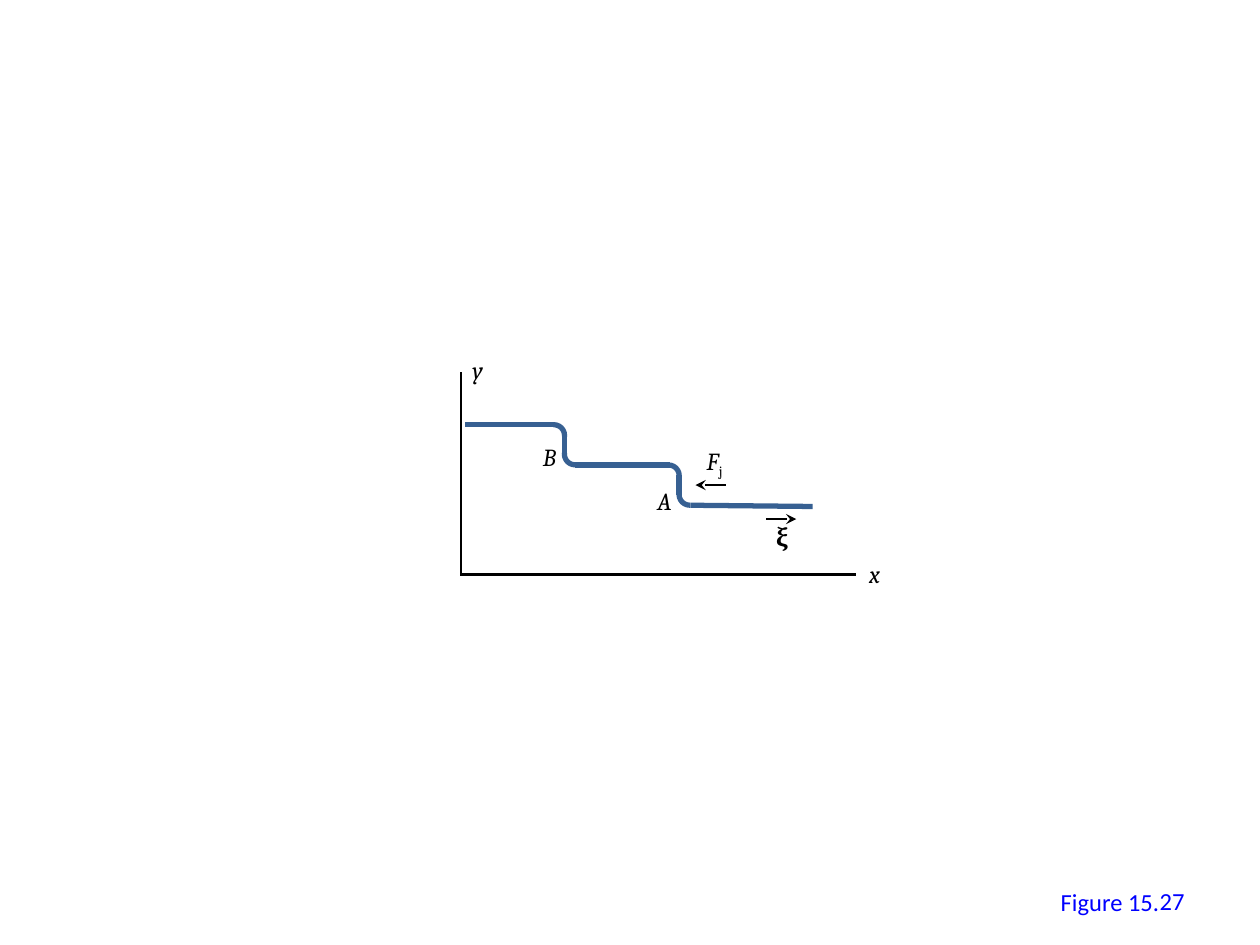
from typing import NamedTuple

from lxml import etree
from pptx import Presentation
from pptx.dml.color import RGBColor
from pptx.enum import shapes as sh, text as tx
from pptx.oxml.ns import qn
from pptx.util import Inches, Pt

HUES = {"ink": "000000", "step": "376092", "note": "0000FF"}
ARC = 0.17  # width and height of a corner's arc


class Label(NamedTuple):
    text: str
    x: float
    y: float
    w: float
    h: float = 0.34
    font: str = "Cambria"
    hue: str = "ink"
    bold: bool = False
    ital: bool = True
    sub: str = ""


class Line(NamedTuple):
    x1: float
    y1: float
    x2: float
    y2: float
    hue: str = "ink"
    width: float = 1.5
    arrow: bool = False


class Corner(NamedTuple):
    """A rounded drop in the step line, with its riser at x."""
    x: float
    top: float


LABELS = [
    Label("y", 3.65, 2.77, 0.34),
    Label("x", 6.8, 4.39, 0.34),
    Label("ξ", 6.06, 4.09, 0.3, bold=True, ital=False),
    Label("F", 5.51, 3.49, 0.41, sub="j"),
    Label("A", 5.12, 3.81, 0.37),
    Label("B", 4.21, 3.46, 0.37),
    Label("Figure 15.", 8.32, 6.99, 0.99, font="Calibri", hue="note", ital=False),
]
AXES = [Line(6.79, 4.56, 3.66, 4.56), Line(3.66, 4.57, 3.66, 2.95)]
ARROWS = [
    Line(6.08, 4.12, 6.32, 4.12, arrow=True),
    Line(5.76, 3.85, 5.52, 3.85, arrow=True),
]
CORNERS = [Corner(4.48, 3.37), Corner(5.39, 3.69)]
TREADS = [
    Line(4.4, 3.37, 3.69, 3.37, "step", 3),
    Line(5.32, 3.69, 4.56, 3.69, "step", 3),
    Line(6.45, 4.02, 5.48, 4.01, "step", 3),
]


def color(hue: str) -> RGBColor:
    return RGBColor.from_string(HUES[hue])


def draw_line(host, line: Line) -> None:
    ends = [Inches(v) for v in line[:4]]
    item = host.add_connector(sh.MSO_CONNECTOR.STRAIGHT, *ends)
    item.line.color.rgb = color(line.hue)
    item.line.width = Pt(line.width)
    if line.arrow:
        etree.SubElement(item.line._get_or_add_ln(), qn("a:tailEnd"), type="stealth")
    etree.SubElement(item._element.spPr, qn("a:effectLst"))


def draw_arc(host, x: float, y: float, turn: int) -> None:
    arc = host.add_shape(sh.MSO_SHAPE.ARC, *map(Inches, (x, y, ARC, ARC)))
    arc.adjustments[0], arc.adjustments[1] = 52.78, 112.1
    arc.rotation = turn
    arc.shadow.inherit = False
    arc.fill.background()
    arc.line.color.rgb = color("step")
    arc.line.width = Pt(3)


def draw_corner(host, corner: Corner) -> None:
    x, top = corner
    draw_arc(host, x, top + 0.15, 0)
    draw_arc(host, x - ARC, top, 180)
    draw_line(host, Line(x, top + 0.24, x, top + 0.08, "step", 3))


def draw_label(host, label: Label, wrap: bool = False):
    box = host.add_textbox(*map(Inches, label[1:5]))
    frame = box.text_frame
    frame.word_wrap = wrap
    para = frame.paragraphs[0]
    para.add_run().text = label.text
    font = para.font
    font.name, font.size = label.font, Pt(14)
    font.bold, font.italic = label.bold, label.ital
    font.color.rgb = color(label.hue)
    if label.sub:
        run = para.add_run()
        run.text = label.sub
        run.font.italic = False
        run._r.get_or_add_rPr().set("baseline", "-25000")
    return frame


def main() -> None:
    deck = Presentation()
    deck.slide_width, deck.slide_height = Inches(10), Inches(7.5)
    host = deck.slides.add_slide(deck.slide_layouts[6]).shapes
    for axis in AXES:
        draw_line(host, axis)
    steps = host.add_group_shape().shapes
    for corner in CORNERS:
        draw_corner(steps, corner)
    for tread in TREADS:
        draw_line(steps, tread)
    for arrow in ARROWS:
        draw_line(host, arrow)
    for label in LABELS:
        draw_label(host, label)
    page = Label("27", 7.17, 6.95, 2.33, 0.4, "Calibri", "note", ital=False)
    frame = draw_label(host, page, wrap=True)
    frame.vertical_anchor = tx.MSO_ANCHOR.MIDDLE
    frame.paragraphs[0].alignment = tx.PP_ALIGN.RIGHT
    deck.save("out.pptx")


if __name__ == "__main__":
    main()
